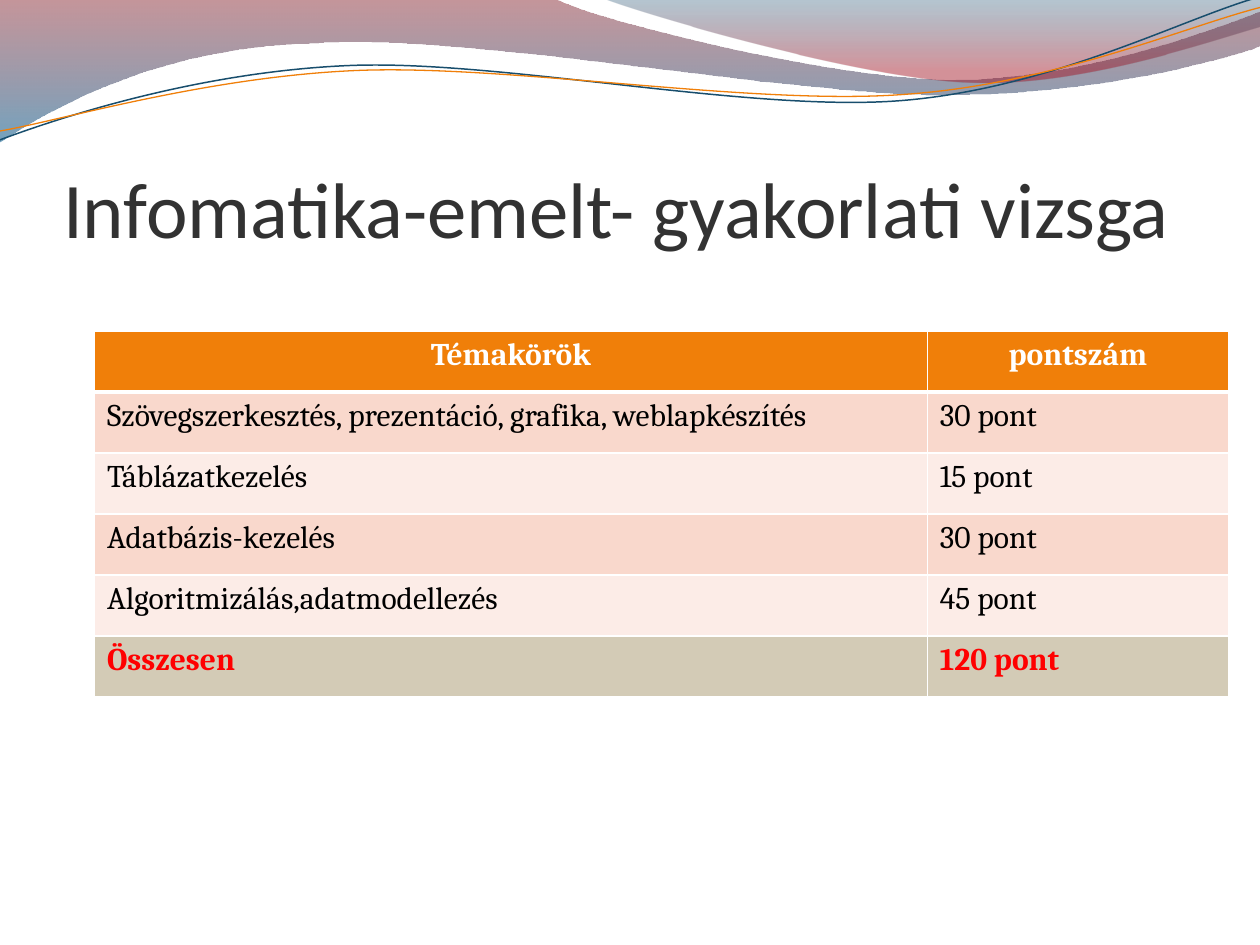
from dataclasses import dataclass
from math import cos, radians, sin

from lxml.etree import SubElement
from pptx import Presentation
from pptx.dml.color import RGBColor
from pptx.enum.text import MSO_ANCHOR, MSO_AUTO_SIZE, PP_ALIGN
from pptx.oxml import parse_xml
from pptx.oxml.ns import nsdecls, qn
from pptx.util import Inches, Pt


@dataclass(frozen=True)
class Theme:
    """Colours, fonts and type sizes of the slide."""
    title_font: str = "Calibri"
    table_font: str = "Cambria"
    title_size: int = 45
    table_size: int = 18
    title: str = "323232"
    header: str = "F07F09"
    header_text: str = "FFFFFF"
    bands: tuple = ("F9D8CC", "FCECE7")
    body_text: str = "000000"
    total: str = "D3CBB6"
    total_text: str = "FF0000"
    border: str = "FFFFFF"
    blue_line: str = "184E6D"
    orange_line: str = "F07F09"
    wide_wave: tuple = ((0, "7E1621", 45), (1, "005689", 55))
    right_wave: tuple = ((0, "094467", 30), (0.8, "A10F1F", 45))


THEME = Theme()
WIDTH, HEIGHT = Inches(10), Inches(7.5)
STRAND_TILT = -2.7

WIDE_WAVE = [
    (0, 0), (4.4, -0.01),
    (4.76, 0.17, 6.64, 0.63, 7.58, 0.63), (8.53, 0.63, 9.58, 0.26, 10, 0.09),
    (10.01, 0.36),
    (9.83, 0.44, 8.7, 0.76, 7.46, 0.75), (6.22, 0.75, 3.82, 0.28, 2.57, 0.34),
    (1.29, 0.36, 0.46, 0.83, -0.01, 1.13), (0, 0),
]
RIGHT_WAVE = [
    (4.79, -0.01),
    (5.09, 0.11, 6.82, 0.62, 7.69, 0.65), (8.56, 0.69, 9.61, 0.32, 10, 0.21),
    (10, 0), (4.79, -0.01),
]
BLUE_STRAND = [
    (0, 1.11),
    (0.48, 0.93, 1.58, 0.57, 2.77, 0.52), (3.95, 0.47, 5.93, 0.89, 7.13, 0.8),
    (8.33, 0.71, 9.38, 0.15, 9.98, -0.02),
]
ORANGE_STRAND = [
    (0, 1.04),
    (0.47, 0.96, 1.64, 0.61, 2.83, 0.56), (4.03, 0.51, 5.97, 0.84, 7.17, 0.75),
    (8.36, 0.67, 9.41, 0.21, 10, 0.06),
]
SCORES = [
    ("Témakörök", "pontszám"),
    ("Szövegszerkesztés, prezentáció, grafika, weblapkészítés", "30 pont"),
    ("Táblázatkezelés", "15 pont"),
    ("Adatbázis-kezelés", "30 pont"),
    ("Algoritmizálás,adatmodellezés", "45 pont"),
    ("Összesen", "120 pont"),
]


def apply(target, **values):
    """Set every given format value on the target."""
    for name, value in values.items():
        setattr(target, name, value)


def style_text(paragraph, color, **values):
    """Format the runs of a paragraph."""
    for run in paragraph.runs:
        apply(run.font, **values)
        run.font.color.rgb = RGBColor.from_string(color)


def turn(segments, center, degrees):
    """Rotate all points of the segments about a center."""
    (cx, cy), angle = center, radians(degrees)
    turned = []
    for segment in segments:
        offsets = [(x - cx, y - cy) for x, y in zip(segment[::2], segment[1::2])]
        turned.append(tuple(value for x, y in offsets for value in (
            cx + x * cos(angle) - y * sin(angle), cy + x * sin(angle) + y * cos(angle))))
    return turned


def bend(outline, segments):
    """Join each three control points of the outline into a cubic curve."""
    steps = iter(list(outline.element.iter(qn("a:lnTo"))))
    for segment in segments[1:]:
        first = next(steps)
        if len(segment) == 6:
            curve = parse_xml(f'<a:cubicBezTo {nsdecls("a")}/>')
            first.addprevious(curve)
            for step in (first, next(steps), next(steps)):
                curve.append(step[0])
                step.getparent().remove(step)


def add_outline(slide, segments, close):
    """Add a freeform that follows the segments."""
    first, *rest = [(Inches(x), Inches(y)) for segment in segments
                    for x, y in zip(segment[::2], segment[1::2])]
    builder = slide.shapes.build_freeform(*first)
    builder.add_line_segments(rest, close=close)
    outline = builder.convert_to_shape()
    outline.shadow.inherit = False
    bend(outline, segments)
    return outline


def add_wave(slide, segments, stops):
    """Add a translucent wave shaded from top to bottom."""
    wave = add_outline(slide, segments, True)
    wave.line.fill.background()
    wave.fill.gradient()
    wave.fill.gradient_angle = 270
    for stop, (position, color, _) in zip(wave.fill.gradient_stops, stops):
        stop.position = position
        stop.color.rgb = RGBColor.from_string(color)
    for tint, (_, _, opacity) in zip(wave.element.spPr.iter(qn("a:srgbClr")), stops):
        SubElement(tint, qn("a:alpha")).set("val", str(opacity * 1000))


def add_strand(slide, segments, center, color, width):
    """Add a thin tilted curve."""
    strand = add_outline(slide, turn(segments, center, -STRAND_TILT), False)
    strand.rotation = STRAND_TILT
    strand.fill.background()
    strand.line.color.rgb = RGBColor.from_string(color)
    strand.line.width = Pt(width)


def set_title(slide, text):
    """Place the title in front of the waves and format it."""
    title = slide.shapes.title
    title.element.getparent().append(title.element)
    apply(title, left=int(WIDTH * 0.05), top=Inches(0.77),
          width=int(WIDTH * 0.9), height=Inches(1.25))
    frame = title.text_frame
    frame.text = text
    apply(frame, margin_left=0, margin_right=0, margin_top=Inches(0.05), margin_bottom=0,
          vertical_anchor=MSO_ANCHOR.BOTTOM, word_wrap=True, auto_size=MSO_AUTO_SIZE.NONE)
    frame.paragraphs[0].alignment = PP_ALIGN.LEFT
    style_text(frame.paragraphs[0], THEME.title,
               name=THEME.title_font, size=Pt(THEME.title_size))


def set_borders(cell, bottom):
    """Draw the four borders of a cell."""
    properties = cell._tc.get_or_add_tcPr()
    sides = {"lnL": 1, "lnR": 1, "lnT": 1, "lnB": bottom}
    for index, (side, width) in enumerate(sides.items()):
        properties.insert(index, parse_xml(
            f'<a:{side} {nsdecls("a")} w="{Pt(width)}"><a:solidFill>'
            f'<a:srgbClr val="{THEME.border}"/></a:solidFill></a:{side}>'))


def row_style(row, last):
    """Give the fill, text colour and weight of a table row."""
    if row == 0:
        return THEME.header, THEME.header_text, True
    if row == last:
        return THEME.total, THEME.total_text, True
    return THEME.bands[(row - 1) % 2], THEME.body_text, False


def add_score_table(slide, rows):
    """Add the table of topics and points."""
    table = slide.shapes.add_table(len(rows), 2, Inches(0.75), Pt(189),
                                   Inches(9), Inches(2.91)).table
    for column, width in zip(table.columns, (6.61, 2.39)):
        column.width = Inches(width)
    for r, texts in enumerate(rows):
        fill, color, bold = row_style(r, len(rows) - 1)
        for c, text in enumerate(texts):
            cell = table.cell(r, c)
            cell.text = text
            cell.fill.solid()
            cell.fill.fore_color.rgb = RGBColor.from_string(fill)
            set_borders(cell, 1 if r else 3)
            paragraph = cell.text_frame.paragraphs[0]
            paragraph.alignment = PP_ALIGN.LEFT if r else PP_ALIGN.CENTER
            style_text(paragraph, color, name=THEME.table_font,
                       size=Pt(THEME.table_size), bold=bold)


def main():
    """Build the slide and save it."""
    deck = Presentation()
    apply(deck, slide_width=WIDTH, slide_height=HEIGHT)
    slide = deck.slides.add_slide(deck.slide_layouts[5])
    add_wave(slide, WIDE_WAVE, THEME.wide_wave)
    add_wave(slide, RIGHT_WAVE, THEME.right_wave)
    add_strand(slide, BLUE_STRAND, (4.99, 0.58), THEME.blue_line, 0.85)
    add_strand(slide, ORANGE_STRAND, (5, 0.59), THEME.orange_line, 0.75)
    set_title(slide, "Infomatika-emelt- gyakorlati vizsga")
    add_score_table(slide, SCORES)
    deck.save("out.pptx")


if __name__ == "__main__":
    main()
